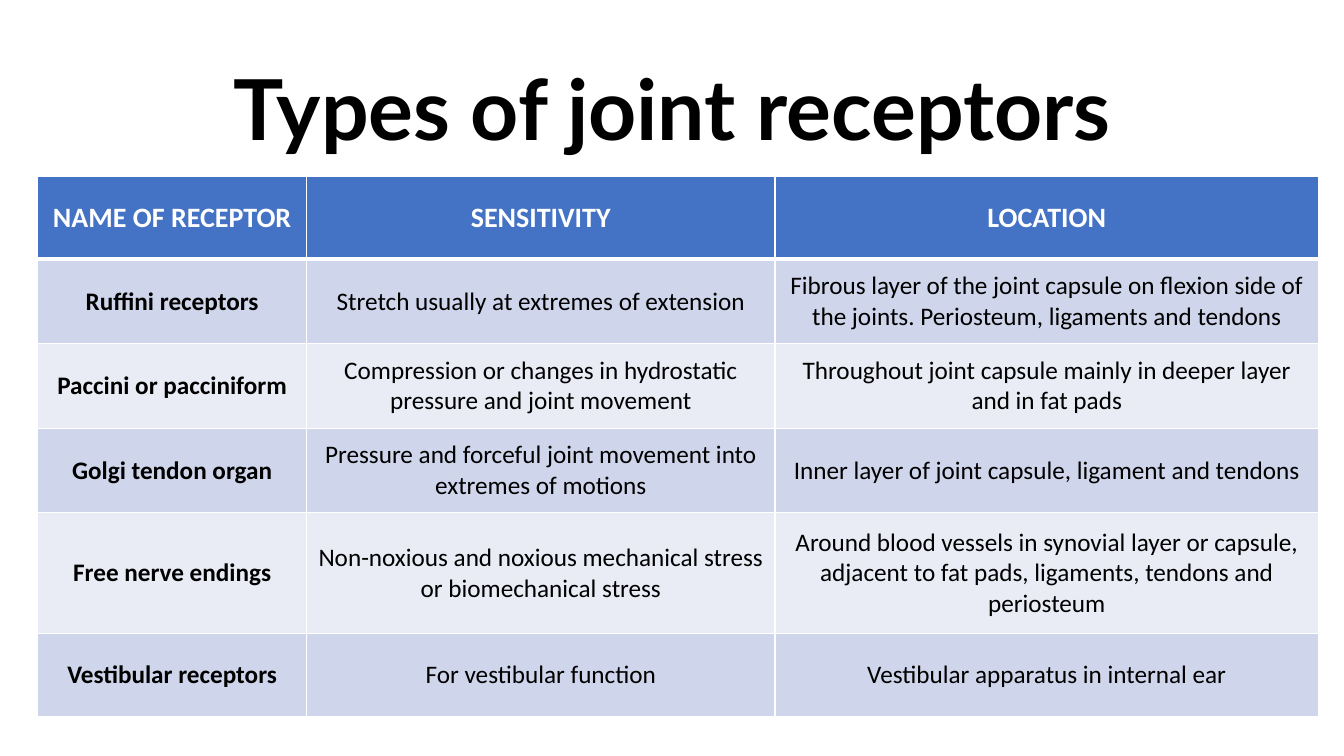
from lxml.etree import SubElement
from pptx import Presentation
from pptx.dml.color import RGBColor
from pptx.enum.text import MSO_ANCHOR, PP_ALIGN
from pptx.oxml.ns import qn
from pptx.util import Cm, Pt

COLORS = {
    "ink": "000000",
    "header": "4472C4",
    "odd_band": "CFD5EA",
    "even_band": "E9EBF5",
    "white": "FFFFFF",
}
FORMATS = {
    "title": {"name": "Lato", "size": Pt(60), "bold": True},
    "header": {"name": "Calibri", "size": Pt(20), "bold": True},
    "receptor": {"name": "Calibri", "size": Pt(18), "bold": True},
    "detail": {"name": "Calibri", "size": Pt(18), "bold": False},
}
COLUMN_WIDTHS = [6.78, 11.8, 13.7]
ROW_HEIGHTS = [2.08, 2.13, 2.13, 2.13, 3.05, 2.08]
RECEPTORS = [
    ("NAME OF RECEPTOR", "SENSITIVITY", "LOCATION"),
    ("Ruffini receptors",
     "Stretch usually at extremes of extension",
     "Fibrous layer of the joint capsule on flexion side of the joints. "
     "Periosteum, ligaments and tendons"),
    ("Paccini or pacciniform",
     "Compression or changes in hydrostatic pressure and joint movement",
     "Throughout joint capsule mainly in deeper layer and in fat pads"),
    ("Golgi tendon organ",
     "Pressure and forceful joint movement into extremes of motions",
     "Inner layer of joint capsule, ligament and tendons"),
    ("Free nerve endings",
     "Non-noxious and noxious mechanical stress or biomechanical stress",
     "Around blood vessels in synovial layer or capsule, adjacent to fat pads, "
     "ligaments, tendons and periosteum"),
    ("Vestibular receptors",
     "For vestibular function",
     "Vestibular apparatus in internal ear"),
]


def color(name):
    return RGBColor.from_string(COLORS[name])


def write_text(frame, wording, style, ink):
    paragraph = frame.paragraphs[0]
    paragraph.alignment = PP_ALIGN.CENTER
    run = paragraph.add_run()
    run.text = wording
    for attribute, value in FORMATS[style].items():
        setattr(run.font, attribute, value)
    run.font.color.rgb = color(ink)
    return paragraph


def add_title(slide, wording):
    title = slide.shapes.add_textbox(Cm(2.33), Cm(1.01), Cm(29.21), Cm(3.68))
    frame = title.text_frame
    frame.word_wrap = True
    frame.vertical_anchor = MSO_ANCHOR.MIDDLE
    write_text(frame, wording, "title", "ink").line_spacing = 0.9


def add_borders(cell, widths):
    properties = cell._tc.get_or_add_tcPr()
    for side, width in widths.items():
        border = SubElement(properties, qn(f"a:ln{side}"), w=str(Pt(width)))
        fill = SubElement(border, qn("a:solidFill"))
        SubElement(fill, qn("a:srgbClr"), val=COLORS["white"])


def fill_cell(cell, wording, row, column):
    if row == 0:
        style, ink, band = "header", "white", "header"
    else:
        style = "detail" if column else "receptor"
        ink = "ink"
        band = "odd_band" if row % 2 else "even_band"
    top = 3 if row == 1 else 1
    bottom = 3 if row == 0 else 1
    add_borders(cell, {"L": 1, "R": 1, "T": top, "B": bottom})
    cell.fill.solid()
    cell.fill.fore_color.rgb = color(band)
    cell.vertical_anchor = MSO_ANCHOR.MIDDLE
    write_text(cell.text_frame, wording, style, ink)


def add_receptor_table(slide):
    receptor_table = slide.shapes.add_table(
        len(ROW_HEIGHTS), len(COLUMN_WIDTHS), Cm(0.95), Cm(4.45),
        Cm(sum(COLUMN_WIDTHS)), Cm(sum(ROW_HEIGHTS))).table
    for column, width in zip(receptor_table.columns, COLUMN_WIDTHS):
        column.width = Cm(width)
    for row, height in zip(receptor_table.rows, ROW_HEIGHTS):
        row.height = Cm(height)
    for row, wordings in enumerate(RECEPTORS):
        for column, wording in enumerate(wordings):
            fill_cell(receptor_table.cell(row, column), wording, row, column)


def main():
    presentation = Presentation()
    presentation.slide_width = Cm(33.87)
    presentation.slide_height = Cm(19.05)
    slide = presentation.slides.add_slide(presentation.slide_layouts[6])
    add_title(slide, "Types of joint receptors")
    add_receptor_table(slide)
    presentation.save("out.pptx")


if __name__ == "__main__":
    main()
